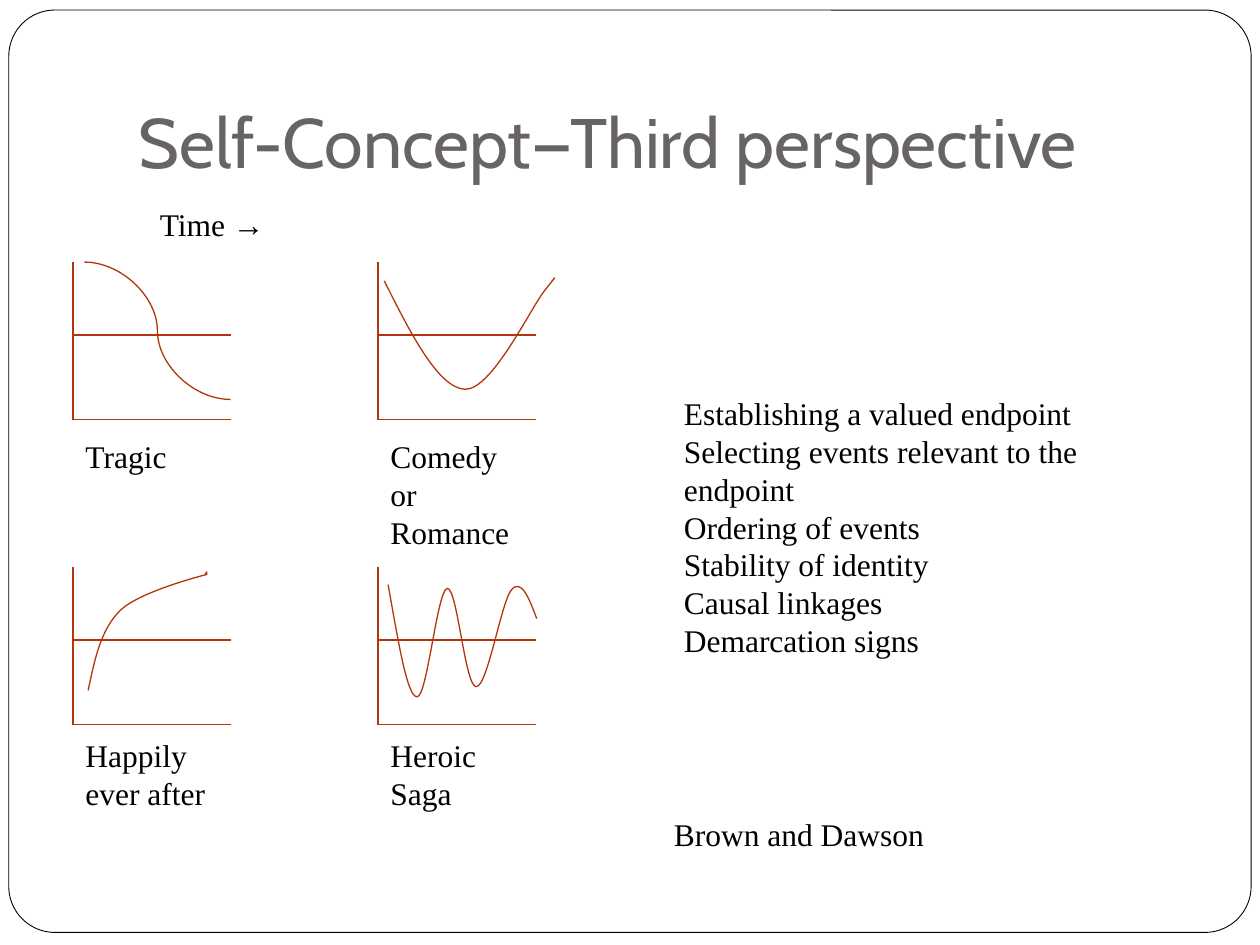
"""Build the slide on self-concept with four story curves over time."""
from dataclasses import dataclass
from lxml.etree import SubElement
from pptx import Presentation
from pptx.dml.color import RGBColor as Rgb
from pptx.enum.shapes import MSO_CONNECTOR as Conn, MSO_SHAPE as Shape
from pptx.enum.text import MSO_ANCHOR as Anchor, MSO_AUTO_SIZE as Auto, PP_ALIGN as Align
from pptx.oxml.ns import qn
from pptx.util import Inches, Pt


@dataclass(frozen=True)
class Theme:
    paper: Rgb = Rgb(255, 255, 255)
    ink: Rgb = Rgb(0, 0, 0)
    title: Rgb = Rgb(0x69, 0x64, 0x64)
    rust: Rgb = Rgb(0xB1, 0x36, 0x0B)
    head: str = "Cabin"
    body: str = "Times New Roman"
    big: int = 40
    small: int = 18
    thin: float = 0.5
    line: float = 0.75


THEME = Theme()
WIDE, HIGH = 10, 7.5
LEFT, TOP, PITCH, SIDE, MID = 0.58, 2.08, 2.42, 1.25, 0.58

TITLE = "Self-Concept—Third perspective"
PLOTS = [
    {"name": "Tragic", "cell": (0, 0), "drop": 1.34, "bend": [(0.09, 0), (1.25, 1.09)]},
    {"name": "Comedy or Romance", "cell": (1, 0), "drop": 1.34, "curve": [
        (0.05, 0.15), (0.26, 0.57), (0.48, 1), (0.69, 1.01), (0.9, 1.02),
        (1.21, 0.37), (1.32, 0.23), (1.43, 0.09), (1.41, 0.12), (1.38, 0.15)]},
    {"name": "Happily ever after", "cell": (0, 1), "drop": 1.29, "curve": [
        (0.12, 0.98), (0.17, 0.74), (0.22, 0.49), (0.38, 0.34), (0.54, 0.19),
        (1.06, 0.06), (1.06, 0.06), (1.06, 0.06), (1.06, 0.04), (1.06, 0.04),
        (1.06, 0.04), (1.05, 0.05), (1.05, 0.06)]},
    {"name": "Heroic Saga", "cell": (1, 1), "drop": 1.29, "curve": [
        (0.08, 0.14), (0.16, 0.58), (0.23, 1.03), (0.31, 1.03), (0.39, 1.04),
        (0.47, 0.18), (0.55, 0.17), (0.63, 0.16), (0.69, 0.95), (0.78, 0.95),
        (0.87, 0.95), (0.98, 0.27), (1.06, 0.18), (1.14, 0.09), (1.2, 0.25),
        (1.26, 0.41)]},
]
NOTES = [
    ((1.17, 1.58, 2.42, 0.4), ["Time →"]),
    ((5.33, 3.08, 4.17, 1.92), [
        "Establishing a valued endpoint",
        "Selecting events relevant to the endpoint",
        "Ordering of events",
        "Stability of identity",
        "Causal linkages",
        "Demarcation signs"]),
    ((5.25, 6.42, 4.08, 0.4), ["Brown and Dawson"]),
]


def style(font, name, size, color):
    for key, val in {"name": name, "size": Pt(size), "bold": False}.items():
        setattr(font, key, val)
    font.color.rgb = color


def ink(shape, color, width):
    shape.line.color.rgb = color
    shape.line.width = Pt(width)


def link(slide, start, end, kind=Conn.STRAIGHT):
    line = slide.shapes.add_connector(kind, *map(Inches, (*start, *end)))
    ink(line, THEME.rust, THEME.line)
    SubElement(line._element.spPr, qn("a:effectLst"))


def curve(slide, points):
    first, *rest = points
    pen = slide.shapes.build_freeform(*map(Inches, first))
    pen.add_line_segments([tuple(map(Inches, spot)) for spot in rest], close=False)
    shape = pen.convert_to_shape()
    shape.shadow.inherit = False
    shape.fill.background()
    ink(shape, THEME.rust, THEME.line)
    steps = list(shape._element.iter(qn("a:lnTo")))
    for i in range(0, len(steps), 3):
        trio = steps[i:i + 3]
        bend = SubElement(trio[0].getparent(), qn("a:cubicBezTo"))
        for step in trio:
            bend.append(step[0])
            step.getparent().remove(step)


def write(slide, box, lines):
    frame = slide.shapes.add_textbox(*map(Inches, box)).text_frame
    frame.word_wrap = True
    frame.auto_size = Auto.SHAPE_TO_FIT_TEXT
    frame.text = "\n".join(lines)
    for para in frame.paragraphs:
        style(para.runs[0].font, THEME.body, THEME.small, THEME.ink)


def plot(slide, name, cell, drop, curve_points=(), bend=()):
    x, y = LEFT + cell[0] * PITCH, TOP + cell[1] * PITCH
    link(slide, (x, y), (x, y + SIDE))
    for down in (MID, SIDE):
        link(slide, (x, y + down), (x + SIDE, y + down))
    if bend:
        link(slide, *[(x + a, y + b) for a, b in bend], Conn.CURVE)
    if curve_points:
        curve(slide, [(x + a, y + b) for a, b in curve_points])
    write(slide, (x, y + drop, SIDE, 0.71), [name])


def border(slide):
    shape = slide.shapes.add_shape(
        Shape.ROUNDED_RECTANGLE, *map(Inches, (0.07, 0.08, 9.86, 7.32)))
    shape.adjustments[0] = 0.05
    shape.shadow.inherit = False
    shape.fill.solid()
    shape.fill.fore_color.rgb = THEME.paper
    ink(shape, THEME.ink, THEME.thin)
    slide.shapes._spTree.insert(2, shape._element)


def head(slide):
    title = slide.shapes.title
    place = dict(zip(("left", "top", "width", "height"), map(Inches, (1, 0.3, 8.5, 1.25))))
    for key, val in place.items():
        setattr(title, key, val)
    frame = title.text_frame
    frame.text = TITLE
    form = {"vertical_anchor": Anchor.BOTTOM, "word_wrap": True, "auto_size": Auto.NONE,
            "margin_bottom": Inches(0.1)}
    for key, val in form.items():
        setattr(frame, key, val)
    para = frame.paragraphs[0]
    para.alignment = Align.LEFT
    style(para.runs[0].font, THEME.head, THEME.big, THEME.title)


def main():
    deck = Presentation()
    deck.slide_width, deck.slide_height = Inches(WIDE), Inches(HIGH)
    slide = deck.slides.add_slide(deck.slide_layouts[5])
    border(slide)
    head(slide)
    for item in PLOTS:
        plot(slide, item["name"], item["cell"], item["drop"],
             item.get("curve", ()), item.get("bend", ()))
    for box, lines in NOTES:
        write(slide, box, lines)
    deck.save("out.pptx")


if __name__ == "__main__":
    main()
